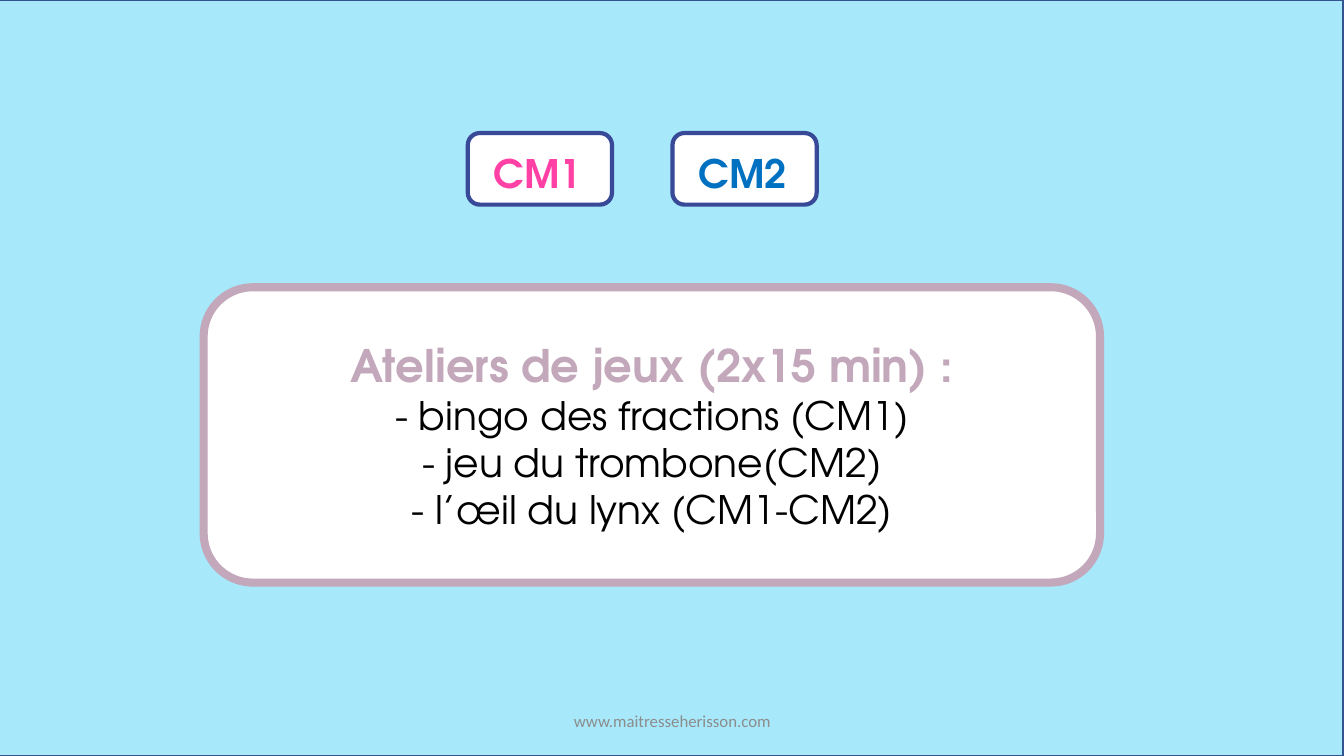
from dataclasses import dataclass

from pptx import Presentation
from pptx.dml.color import RGBColor
from pptx.enum.shapes import MSO_SHAPE
from pptx.enum.text import MSO_ANCHOR, PP_ALIGN
from pptx.util import Inches, Pt

RECT, ROUNDED = MSO_SHAPE.RECTANGLE, MSO_SHAPE.ROUNDED_RECTANGLE
LEFT, CENTER = PP_ALIGN.LEFT, PP_ALIGN.CENTER
TOP, MIDDLE = MSO_ANCHOR.TOP, MSO_ANCHOR.MIDDLE
FONT = "TeX Gyre Adventor"
WHITE, MAUVE = "FFFFFF", "C3A7BA"


@dataclass
class Level:
    name: str
    color: str
    left: float


LEVELS = [Level("CM1", "FF41A5", 4.64), Level("CM2", "0070C0", 6.67)]
GAMES = [
    "- bingo des fractions (CM1)",
    "- jeu du trombone(CM2)",
    "- l’œil du lynx (CM1-CM2)",
]


def rgb(color: str) -> RGBColor:
    return RGBColor.from_string(color)


def add_panel(slide, kind, left: float, top: float, width: float, height: float,
              *, fill: str, line: str, weight: float):
    sp = slide.shapes.add_shape(kind, Inches(left), Inches(top), Inches(width), Inches(height))
    sp.shadow.inherit = False
    sp.fill.solid()
    sp.fill.fore_color.rgb = rgb(fill)
    sp.line.color.rgb = rgb(line)
    sp.line.width = Pt(weight)
    return sp


def add_box(slide, left: float, top: float, width: float, height: float, anchor=TOP):
    sp = slide.shapes.add_textbox(Inches(left), Inches(top), Inches(width), Inches(height))
    sp.text_frame.word_wrap = True
    sp.text_frame.vertical_anchor = anchor
    return sp


def write(p, text: str, *, size: float, color: str, font: str = FONT,
          bold: bool = False, align=CENTER) -> None:
    p.alignment = align
    r = p.add_run()
    r.text = text
    r.font.name = font
    r.font.size = Pt(size)
    r.font.bold = bold
    r.font.color.rgb = rgb(color)


def add_level(slide, level: Level) -> None:
    add_panel(slide, ROUNDED, level.left, 1.32, 1.43, 0.71, fill=WHITE, line="374997", weight=3)
    label = add_box(slide, level.left + 0.16, 1.43, 1.1, 0.57)
    write(label.text_frame.paragraphs[0], level.name, size=28, color=level.color,
          bold=True, align=LEFT)


def main() -> None:
    prs = Presentation()
    prs.slide_width, prs.slide_height = Inches(13.33), Inches(7.5)
    slide = prs.slides.add_slide(prs.slide_layouts[6])

    # Backdrop
    add_panel(slide, RECT, -0.01, 0, 13.33, 7.5, fill="A7E8FB", line="325491", weight=1)

    # Class levels
    for level in LEVELS:
        add_level(slide, level)

    # Footer
    footer = add_box(slide, 4.42, 6.95, 4.5, 0.4, MIDDLE)
    write(footer.text_frame.paragraphs[0], "www.maitresseherisson.com",
          size=12, color="8C8C8C", font="Calibri")

    # Workshop card
    card = add_panel(slide, ROUNDED, 2.02, 2.85, 8.89, 2.93, fill=WHITE, line=MAUVE, weight=5.75)
    tf = card.text_frame
    tf.word_wrap = True
    tf.vertical_anchor = MIDDLE
    write(tf.paragraphs[0], "Ateliers de jeux (2x15 min) :", size=32, color=MAUVE, bold=True)
    for game in GAMES:
        write(tf.add_paragraph(), game, size=28, color="000000")

    prs.save("out.pptx")


if __name__ == "__main__":
    main()
